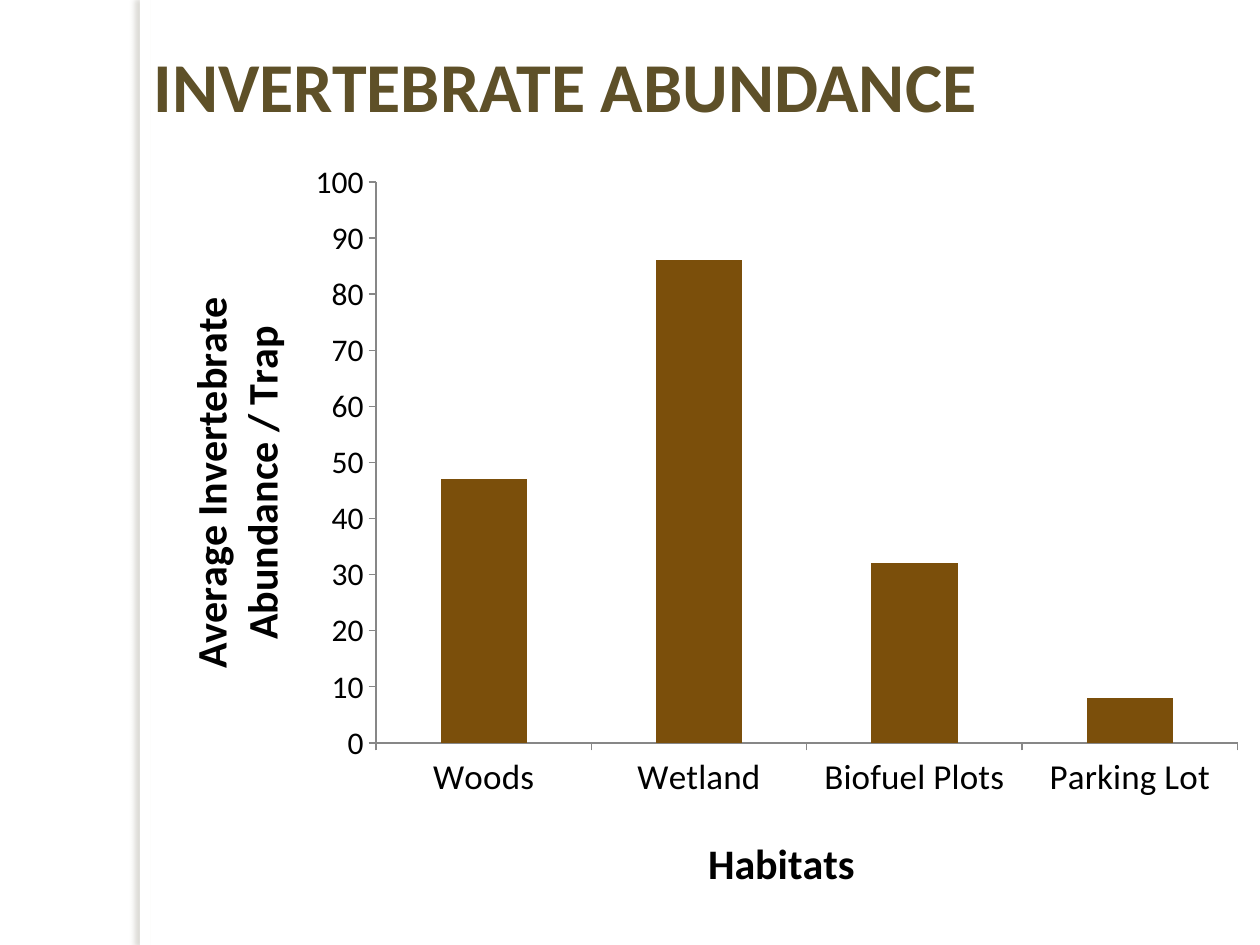
"""Build the invertebrate abundance slide with a column chart by habitat."""
from lxml import etree
from pptx import Presentation
from pptx.chart.data import CategoryChartData
from pptx.dml.color import RGBColor
from pptx.enum.chart import XL_CHART_TYPE as ChartType, XL_TICK_MARK as TickMark
from pptx.enum.shapes import MSO_SHAPE as Shape
from pptx.oxml import parse_xml
from pptx.oxml.ns import nsdecls, qn
from pptx.util import Pt

WHITE = RGBColor(0xFF, 0xFF, 0xFF)
BLACK = RGBColor(0, 0, 0)
OLIVE = RGBColor(0x5E, 0x50, 0x28)
BROWN = RGBColor(0x7B, 0x4F, 0x0B)
GRAY = RGBColor(0x87, 0x87, 0x87)
FONT = "Calibri"


def style_font(font, size, color, bold=False):
    font.name = FONT
    font.size = Pt(size)
    font.bold = bold
    font.color.rgb = color


def place(parent, index, **fractions):
    for old in parent.findall(qn("c:layout")):
        parent.remove(old)
    layout = etree.Element(qn("c:layout"))
    manual = etree.SubElement(layout, qn("c:manualLayout"))
    if "w" in fractions:
        etree.SubElement(manual, qn("c:layoutTarget"), val="inner")
    for mode in ("xMode", "yMode"):
        etree.SubElement(manual, qn(f"c:{mode}"), val="edge")
    for key, value in fractions.items():
        etree.SubElement(manual, qn(f"c:{key}"), val=str(value))
    parent.insert(index, layout)


prs = Presentation()
prs.slide_width, prs.slide_height = Pt(720), Pt(540)
slide = prs.slides.add_slide(prs.slide_layouts[6])
slide.background.fill.solid()
slide.background.fill.fore_color.rgb = WHITE

side_edge = slide.shapes.add_shape(Shape.RECTANGLE, Pt(80), 0, Pt(6), Pt(540))
side_edge.fill.solid()
side_edge.fill.fore_color.rgb = WHITE
side_edge.line.fill.background()
side_edge.shadow.inherit = False
side_edge.element.spPr.find(qn("a:effectLst")).append(parse_xml(
    f'<a:outerShdw {nsdecls("a")} blurRad="{Pt(3)}" dist="{Pt(3)}" dir="10800000">'
    '<a:srgbClr val="787360"><a:alpha val="25000"/></a:srgbClr></a:outerShdw>'))

abundance = CategoryChartData()
abundance.categories = ["Woods", "Wetland", "Biofuel Plots", "Parking Lot"]
abundance.add_series("Series 1", (47, 86, 32, 8))
chart = slide.shapes.add_chart(ChartType.COLUMN_CLUSTERED, Pt(80.6), Pt(82),
                               Pt(639.4), Pt(439.2), abundance).chart
style_font(chart.font, 10, BLACK)
chart.has_legend = False
chart.has_title = False

columns = chart.plots[0]
columns.vary_by_categories = False
columns.gap_width = 150
columns.series[0].format.fill.solid()
columns.series[0].format.fill.fore_color.rgb = BROWN
place(columns._element.getparent(), 0, x=0.21, y=0.05, w=0.77, h=0.73)

habitats, averages = chart.category_axis, chart.value_axis
averages.minimum_scale, averages.maximum_scale, averages.major_unit = 0, 100, 10
averages.has_major_gridlines = False

for axis, caption, label_size, left, top in (
        (habitats, "Habitats", 20, 0.5, 0.89),
        (averages, "Average Invertebrate Abundance / Trap", 18, 0.03, 0.19)):
    axis.major_tick_mark = TickMark.OUTSIDE
    axis.minor_tick_mark = TickMark.NONE
    axis.format.line.color.rgb = GRAY
    axis.format.line.width = Pt(0.75)
    style_font(axis.tick_labels.font, label_size, BLACK)
    axis.axis_title.text_frame.text = caption
    style_font(axis.axis_title.text_frame.paragraphs[0].runs[0].font, 24, BLACK, True)
    place(axis.axis_title._element, 1, x=left, y=top)

body = averages.axis_title._element.find(".//" + qn("a:bodyPr"))
body.set("rot", "-5400000")
body.set("vert", "horz")

heading = slide.shapes.add_textbox(Pt(80.6), Pt(23.8), Pt(639.4), Pt(180)).text_frame
heading.word_wrap = True
heading.text = "INVERTEBRATE ABUNDANCE"
heading.paragraphs[0].line_spacing = Pt(45)
style_font(heading.paragraphs[0].runs[0].font, 40, OLIVE, True)

prs.save("out.pptx")
